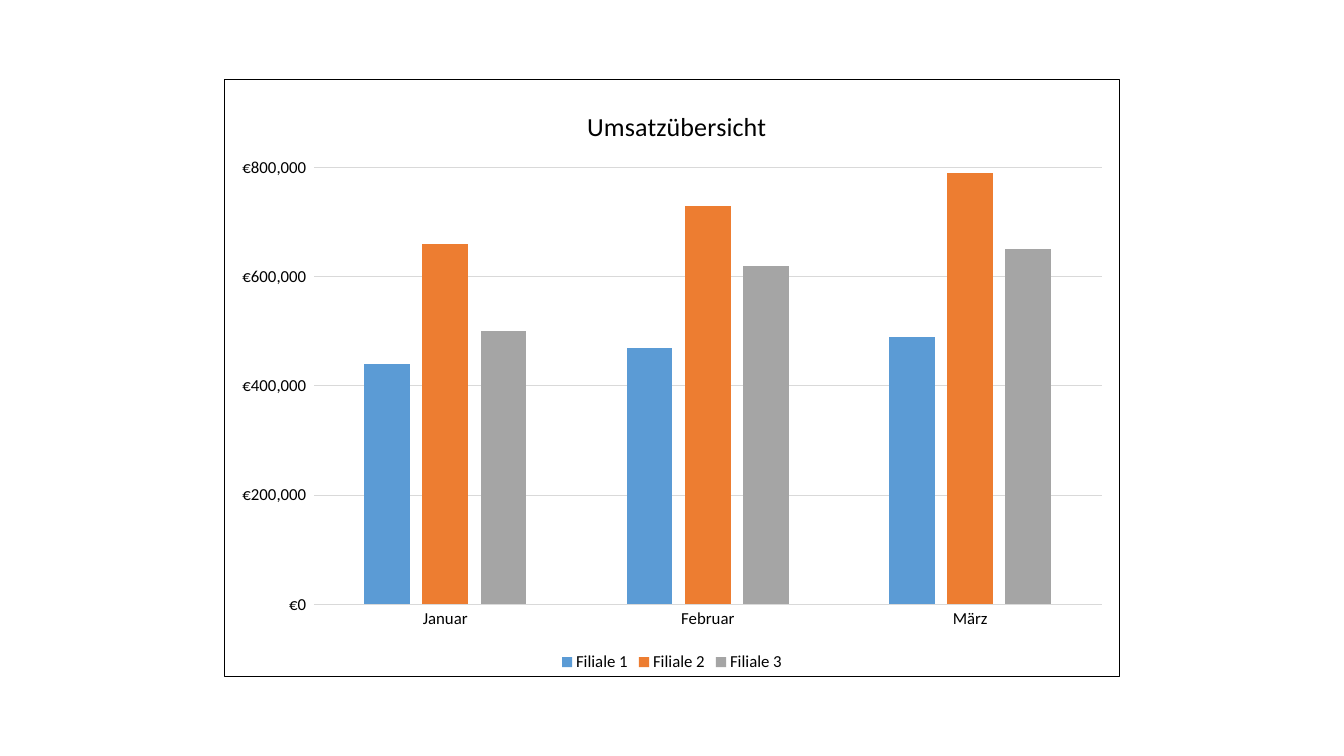
from pptx import Presentation
from pptx.chart.data import CategoryChartData
from pptx.dml.color import RGBColor
from pptx.enum.chart import XL_CHART_TYPE, XL_LEGEND_POSITION, XL_TICK_MARK
from pptx.oxml import parse_xml
from pptx.oxml.ns import nsdecls, qn
from pptx.util import Inches, Pt

MONTHS = ["Januar", "Februar", "März"]
SALES = [
    ("Filiale 1", "5B9BD5", (440000, 470000, 490000)),
    ("Filiale 2", "ED7D31", (660000, 730000, 790000)),
    ("Filiale 3", "A5A5A5", (500000, 620000, 650000)),
]
EURO = '"€"#,##0_);[Red]\\("€"#,##0\\)'


def color(code):
    return RGBColor.from_string(code)


def place(item, index, inner=False, **shares):
    for old in item.findall(qn("c:layout")):
        item.remove(old)
    target = '<c:layoutTarget val="inner"/>' if inner else ""
    modes = "".join(f'<c:{key}Mode val="edge"/>' for key in "xy")
    sizes = "".join(f'<c:{key} val="{share}"/>' for key, share in shares.items())
    item.insert(index, parse_xml(
        f'<c:layout {nsdecls("c")}><c:manualLayout>{target}{modes}{sizes}'
        '</c:manualLayout></c:layout>'))


class Page:
    """Holds the chart style and the current slide."""

    face, ink, rule = "Calibri", "000000", "D9D9D9"
    thin = Pt(0.75)

    def __init__(self, deck):
        self.wide, self.high = deck.slide_width, deck.slide_height
        self.slide = deck.slides.add_slide(deck.slide_layouts[6])

    def style(self, font, size):
        font.name, font.size, font.bold = self.face, Pt(size), False
        font.color.rgb = color(self.ink)

    def stroke(self, line):
        line.color.rgb = color(self.rule)
        line.width = self.thin

    def chart(self, left, top, width, height):
        data = CategoryChartData()
        data.categories = MONTHS
        for name, _, values in SALES:
            data.add_series(name, values)
        frame = self.slide.shapes.add_chart(
            XL_CHART_TYPE.COLUMN_CLUSTERED,
            int(left * self.wide), int(top * self.high),
            int(width * self.wide), int(height * self.high), data)
        chart = frame.chart
        self.style(chart.font, 10)
        plot = chart.plots[0]
        plot.gap_width, plot.overlap = 219, -27
        plot.vary_by_categories = False
        for series, (_, code, _) in zip(plot.series, SALES):
            series.format.fill.solid()
            series.format.fill.fore_color.rgb = color(code)
        place(chart.element.find(".//" + qn("c:plotArea")), 0, True,
              x=0.1, y=0.147, w=0.88, h=0.733)
        return chart

    def title(self, chart, text):
        head = chart.chart_title
        head.text_frame.text = text
        self.style(head.text_frame.paragraphs[0].runs[0].font, 18.6)
        head.include_in_layout = False
        place(head.element, 1, x=0.4, y=0.04)

    def axes(self, chart):
        for axis in (chart.category_axis, chart.value_axis):
            axis.major_tick_mark = axis.minor_tick_mark = XL_TICK_MARK.NONE
            self.style(axis.tick_labels.font, 12)
        self.stroke(chart.category_axis.format.line)
        scale = chart.value_axis
        scale.minimum_scale, scale.maximum_scale = 0, 800000
        scale.major_unit = 200000
        scale.format.line.fill.background()
        self.stroke(scale.major_gridlines.format.line)
        scale.tick_labels.number_format = EURO
        scale.tick_labels.number_format_is_linked = False

    def legend(self, chart):
        chart.has_legend = True
        chart.legend.position = XL_LEGEND_POSITION.BOTTOM
        chart.legend.include_in_layout = False
        self.style(chart.legend.font, 12)

    def border(self, chart):
        chart.element.find(qn("c:chart")).addnext(parse_xml(
            f'<c:spPr {nsdecls("c", "a")}>'
            '<a:solidFill><a:srgbClr val="FFFFFF"/></a:solidFill>'
            f'<a:ln w="{int(self.thin)}"><a:solidFill><a:srgbClr val="{self.ink}"/>'
            '</a:solidFill></a:ln></c:spPr>'))


def main():
    deck = Presentation()
    deck.slide_width, deck.slide_height = Inches(13.33), Inches(7.5)
    page = Page(deck)
    chart = page.chart(1 / 6, 0.105, 2 / 3, 0.79)
    page.title(chart, "Umsatzübersicht")
    page.axes(chart)
    page.legend(chart)
    page.border(chart)
    deck.save("out.pptx")


if __name__ == "__main__":
    main()
